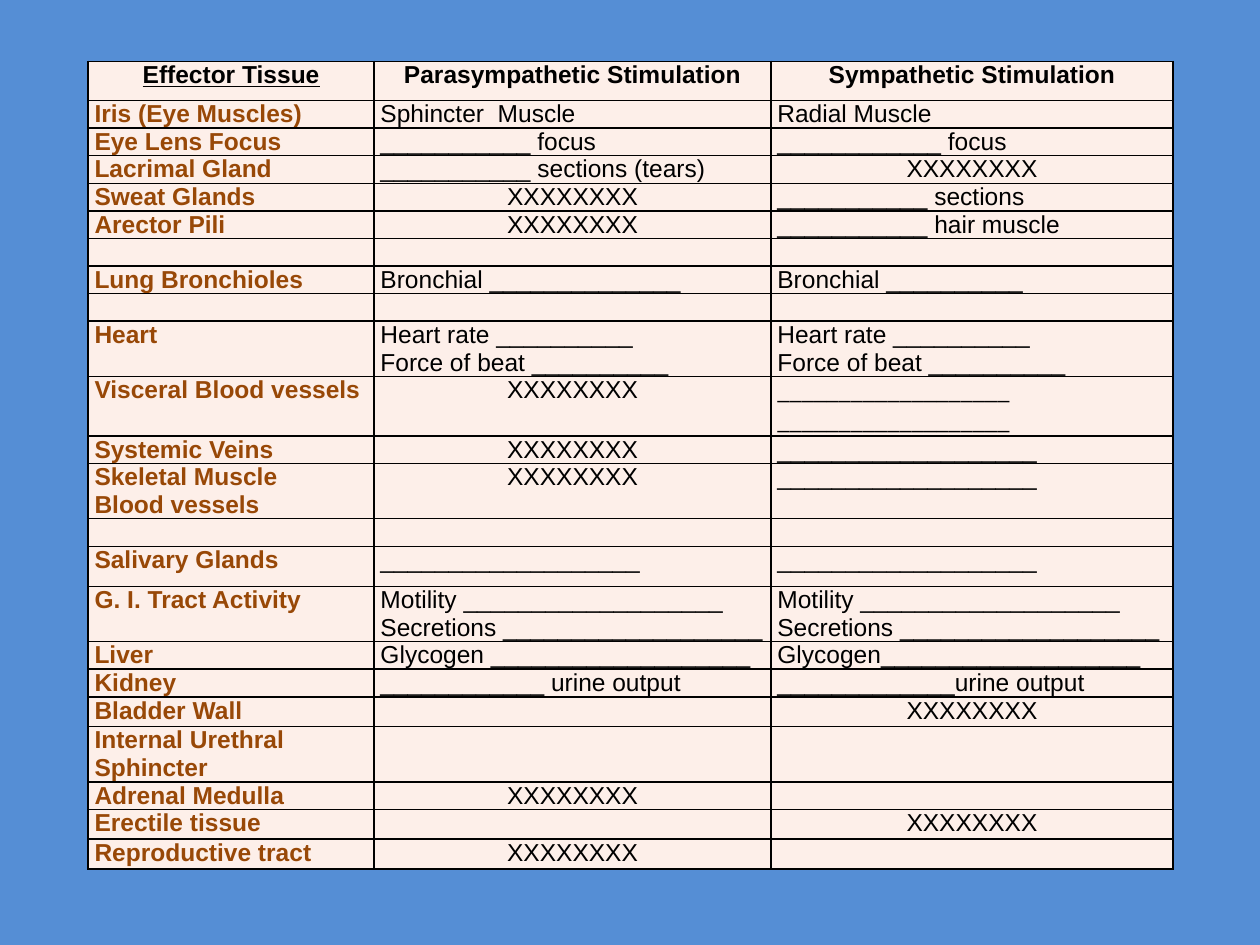
from pptx import Presentation
from pptx.dml.color import RGBColor
from pptx.enum.text import PP_ALIGN
from pptx.oxml.ns import qn
from pptx.util import Inches, Pt
from lxml import etree

MID, JUST, LEFT = PP_ALIGN.CENTER, PP_ALIGN.JUSTIFY, PP_ALIGN.LEFT
BLUE = RGBColor(0x55, 0x8E, 0xD5)
CREAM = RGBColor(0xFD, 0xEF, 0xE9)
BROWN = RGBColor(0x98, 0x48, 0x07)
BLACK = RGBColor(0, 0, 0)
NONE = "XXXXXXXX"
GAP = (0.18, "", "", "")

# Row height, tissue, parasympathetic effect, sympathetic effect
ROWS = [
    (0.31, "Effector Tissue", "Parasympathetic Stimulation", "Sympathetic Stimulation"),
    (0.22, "Iris (Eye Muscles)", "Sphincter  Muscle", "Radial Muscle"),
    (0.18, "Eye Lens Focus", "___________ focus", "____________ focus"),
    (0.18, "Lacrimal Gland", "___________ sections (tears)", NONE),
    (0.18, "Sweat Glands", NONE, "___________ sections"),
    (0.18, "Arector Pili", NONE, "___________ hair muscle"),
    GAP,
    (0.18, "Lung Bronchioles", "Bronchial ______________", "Bronchial __________"),
    GAP,
    (0.36, "Heart", "Heart rate __________\nForce of beat __________",
     "Heart rate __________\nForce of beat __________"),
    (0.36, "Visceral Blood vessels", NONE, "___________________\n___________________"),
    (0.18, "Systemic Veins", NONE, "___________________"),
    (0.36, "Skeletal Muscle\nBlood vessels", NONE, "___________________"),
    GAP,
    (0.32, "Salivary Glands", "___________________", "___________________"),
    (0.36, "G. I. Tract Activity", "Motility ___________________\nSecretions ___________________",
     "Motility ___________________\nSecretions ___________________"),
    (0.18, "Liver", "Glycogen ___________________", "Glycogen___________________"),
    (0.18, "Kidney", "____________ urine output", "_____________urine output"),
    (0.18, "Bladder Wall", "", NONE),
    (0.26, "Internal Urethral Sphincter", "", ""),
    (0.18, "Adrenal Medulla", NONE, ""),
    (0.23, "Erectile tissue", "", NONE),
    (0.18, "Reproductive tract", NONE, ""),
]
# Cells set in the second font, as (row, column)
PLAIN = {(10, 2), (18, 1), (21, 1), (22, 2)}


class Deck:
    font, alt, size = "Arial", "Calibri", Pt(14)
    pads = {"margin_left": Inches(0.05), "margin_right": Inches(0.05),
            "margin_top": 0, "margin_bottom": 0}

    def __init__(self, wide, high):
        self.prs = Presentation()
        self.prs.slide_width, self.prs.slide_height = Inches(wide), Inches(high)
        self.slide = self.prs.slides.add_slide(self.prs.slide_layouts[6])

    def share(self, x, y):
        return int(self.prs.slide_width * x), int(self.prs.slide_height * y)

    def paint(self, color):
        fill = self.slide.background.fill
        fill.solid()
        fill.fore_color.rgb = color

    def border(self, cell):
        props = cell._tc.get_or_add_tcPr()
        for n, side in enumerate(("lnL", "lnR", "lnT", "lnB")):
            line = etree.Element(qn("a:" + side), w=str(Pt(1)))
            fill = etree.SubElement(line, qn("a:solidFill"))
            etree.SubElement(fill, qn("a:srgbClr"), val=str(BLACK))
            props.insert(n, line)

    def style(self, font, look):
        color = look.get("color", BLACK)
        for key, val in look.items():
            if key != "color":
                setattr(font, key, val)
        font.color.rgb = color

    def blank(self, par, face):
        # An empty cell keeps its line height through its end mark
        end = etree.SubElement(par._p, qn("a:endParaRPr"), sz=str(int(self.size.pt * 100)))
        etree.SubElement(end, qn("a:latin"), typeface=face)

    def cell(self, cell, text, look, align):
        for key, val in self.pads.items():
            setattr(cell, key, val)
        cell.fill.solid()
        cell.fill.fore_color.rgb = CREAM
        self.border(cell)
        cell.text = text
        for par in cell.text_frame.paragraphs:
            par.alignment = align
            for run in par.runs:
                self.style(run.font, look)
            if not text:
                self.blank(par, look["name"])

    def table(self, rows, cols, x, y, w, h):
        frame = self.slide.shapes.add_table(
            len(rows), len(cols), *self.share(x, y), *self.share(w, h))
        table = frame.table
        table.first_row = table.horz_banding = False
        for col, wide in zip(table.columns, cols):
            col.width = self.share(wide, 0)[0]
        for r, (high, *texts) in enumerate(rows):
            table.rows[r].height = Inches(high)
            for c, text in enumerate(texts):
                head = r == 0
                look = {"name": self.alt if (r, c) in PLAIN else self.font,
                        "size": self.size, "bold": head or c == 0,
                        "underline": head and c == 0,
                        "color": BROWN if c == 0 and not head else BLACK}
                align = MID if head or text == NONE else JUST
                if text.startswith("Internal"):
                    align = LEFT
                self.cell(table.cell(r, c), text, look, align)
        frame.height = self.share(0, h)[1]


def main():
    deck = Deck(10, 7.5)
    deck.paint(BLUE)
    # Table of effects, placed in shares of the slide
    deck.table(ROWS, (0.227, 0.315, 0.319), 0.07, 0.065, 0.86, 0.867)
    deck.prs.save("out.pptx")


if __name__ == "__main__":
    main()
